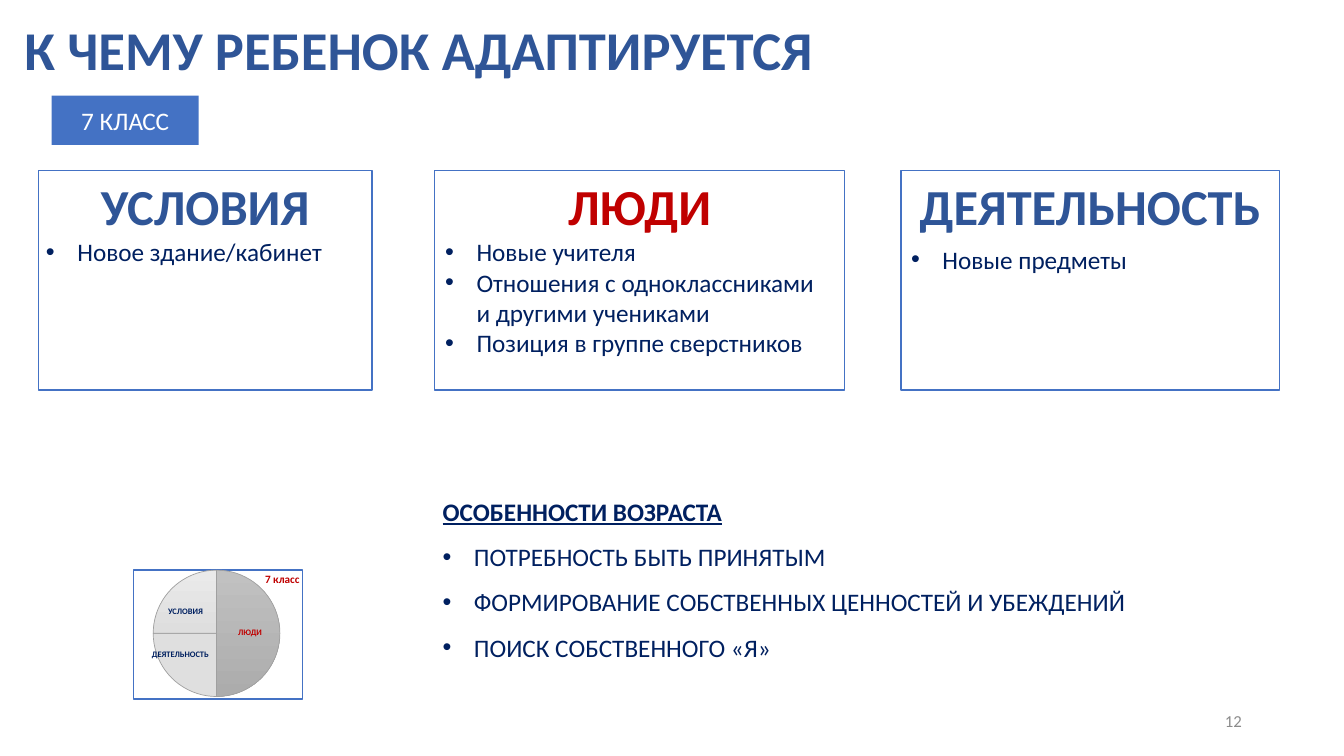
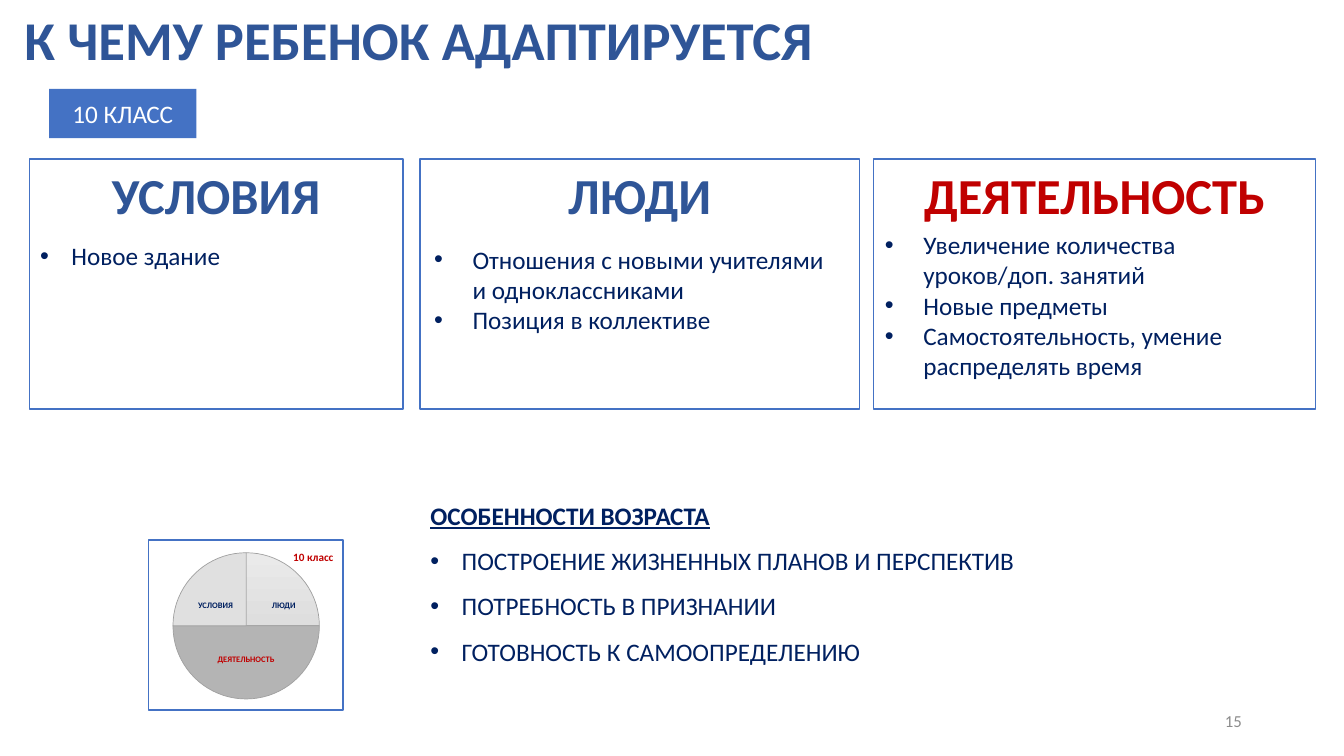
"""Two slides on what a child adapts to in grades 7 and 10."""
from pptx import Presentation
from pptx import util as u
from pptx.chart.data import CategoryChartData
from pptx.dml.color import RGBColor
from pptx.enum import chart as ch, shapes, text
from pptx.oxml import parse_xml
from pptx.oxml.ns import nsdecls, qn

COLORS = {
    "blue": "2F5597", "red": "C00000", "navy": "002060", "accent": "4472C4",
    "white": "FFFFFF", "black": "000000", "number": "8C8C8C", "edge": "A0A0A0",
}
FONT = "Calibri"
LEFT, CENTER, RIGHT = text.PP_ALIGN.LEFT, text.PP_ALIGN.CENTER, text.PP_ALIGN.RIGHT
LIGHT = ("EAEAEA", "DEDEDE")

SLIDES = [
    {
        "number": "12", "title_top": 0.46,
        "tag": ("7 КЛАСС", 1.3, 2.41),
        "card_top": 4.29, "card_height": 5.54,
        "cards": [
            ("УСЛОВИЯ", "blue", 0.97, 8.41, (0.91, 5.84, 10.9), 0.79,
             ["Новое здание/кабинет"]),
            ("ЛЮДИ", "red", 10.95, 10.34, (10.97, 5.84, 9.8), 0.79,
             ["Новые учителя", "Отношения с одноклассниками и другими учениками",
              "Позиция в группе сверстников"]),
            ("ДЕЯТЕЛЬНОСТЬ", "blue", 22.71, 9.53, (22.71, 6.02, 8.76), 0.79,
             ["Новые предметы"]),
        ],
        "traits": (10.9, 11.99, ["ПОТРЕБНОСТЬ БЫТЬ ПРИНЯТЫМ",
                                 "ФОРМИРОВАНИЕ СОБСТВЕННЫХ ЦЕННОСТЕЙ И УБЕЖДЕНИЙ",
                                 "ПОИСК СОБСТВЕННОГО «Я»"]),
        "pie": (3.35, 14.35, 4.29, 3.28), "plot": (0.114, 0, 0.755, 0.982),
        "values": (50, 25, 25), "fills": [("C1C1C1", "ACACAC"), ("DFDFDF",), LIGHT],
        "labels": [
            ("7 класс", 8, "red", LEFT, 6.43, 14.3, 1.8),
            ("УСЛОВИЯ", 6, "navy", CENTER, 3.81, 15.16, 1.73),
            ("ЛЮДИ", 6, "red", CENTER, 5.64, 15.67, 1.32),
            ("ДЕЯТЕЛЬНОСТЬ", 6, "navy", CENTER, 3.35, 16.23, 2.39),
        ],
    },
    {
        "number": "15", "title_top": 0.2,
        "tag": ("10 КЛАСС", 1.24, 2.24),
        "card_top": 4.01, "card_height": 6.3,
        "cards": [
            ("УСЛОВИЯ", "blue", 0.74, 9.42, (0.76, 5.94, 10.9), 0.79,
             ["Новое здание"]),
            ("ЛЮДИ", "blue", 10.59, 11.07, (10.69, 6.02, 10.52), 0.97,
             ["Отношения с новыми учителями и одноклассниками",
              "Позиция в коллективе"]),
            ("ДЕЯТЕЛЬНОСТЬ", "red", 22.02, 11.13, (22.05, 5.66, 11.1), 0.97,
             ["Увеличение количества уроков/доп. занятий", "Новые предметы",
              "Самостоятельность, умение распределять время"]),
        ],
        "traits": (10.59, 12.09, ["ПОСТРОЕНИЕ ЖИЗНЕННЫХ ПЛАНОВ И ПЕРСПЕКТИВ",
                                  "ПОТРЕБНОСТЬ В ПРИЗНАНИИ",
                                  "ГОТОВНОСТЬ К САМООПРЕДЕЛЕНИЮ"]),
        "pie": (3.73, 13.59, 4.93, 4.32), "plot": (0.125, 0.064, 0.754, 0.99),
        "values": (25, 50, 25), "fills": [LIGHT, ("B4B4B4",), ("E0E0E0",)],
        "labels": [
            ("10 класс", 8, "red", LEFT, 7.14, 13.74, 1.8),
            ("УСЛОВИЯ", 6, "navy", CENTER, 4.67, 14.99, 1.52),
            ("ЛЮДИ", 6, "navy", CENTER, 6.53, 14.99, 1.24),
            ("ДЕЯТЕЛЬНОСТЬ", 6, "red", CENTER, 4.93, 16.36, 2.54),
        ],
    },
]


def add_line(tf, value, size, color, align=LEFT, bold=False, underline=False,
             indent=0, spacing=1.0):
    """Write one paragraph, bulleted when it has an indent."""
    p = tf.paragraphs[0] if not tf.paragraphs[0].runs else tf.add_paragraph()
    pPr = p._p.get_or_add_pPr()
    pPr.set("marL", str(u.Cm(indent)))
    pPr.set("indent", str(-u.Cm(indent)))
    if indent:
        pPr.append(parse_xml(f'<a:buFont {nsdecls("a")} typeface="Arial"/>'))
        pPr.append(parse_xml(f'<a:buChar {nsdecls("a")} char="•"/>'))
    else:
        pPr.append(parse_xml(f'<a:buNone {nsdecls("a")}/>'))
    p.alignment, p.line_spacing, p.space_before = align, spacing, u.Pt(0)
    r = p.add_run()
    r.text = value
    r.font.name, r.font.size = FONT, u.Pt(size)
    r.font.bold, r.font.underline = bold, underline
    r.font.color.rgb = RGBColor.from_string(COLORS[color])


def add_box(s, x, y, w, h, fill=None, line=None, anchor=text.MSO_ANCHOR.TOP):
    """Add a text box, or a rectangle when a fill is given."""
    place = [u.Cm(v) for v in (x, y, w, h)]
    if fill:
        sp = s.shapes.add_shape(shapes.MSO_SHAPE.RECTANGLE, *place)
        sp.shadow.inherit = False
        sp.fill.solid()
        sp.fill.fore_color.rgb = RGBColor.from_string(COLORS[fill])
        if line:
            sp.line.color.rgb = RGBColor.from_string(COLORS[line])
            sp.line.width = u.Pt(1)
        else:
            sp.line.fill.background()
    else:
        sp = s.shapes.add_textbox(*place)
    sp.text_frame.word_wrap = True
    sp.text_frame.vertical_anchor = anchor
    return sp.text_frame


prs = Presentation()
prs.slide_width, prs.slide_height = u.Cm(33.87), u.Cm(19.05)

for item in SLIDES:
    s = prs.slides.add_slide(prs.slide_layouts[1])
    title, body = s.shapes.title, s.placeholders[1]
    traits_left, traits_top, traits = item["traits"]
    for sp, place in ((title, (0.36, item["title_top"], 30.25, 1.78)),
                      (body, (traits_left, traits_top, 22, 4.75))):
        sp.left, sp.top, sp.width, sp.height = [u.Cm(v) for v in place]
        sp.text_frame.word_wrap = True
        sp.text_frame.auto_size = text.MSO_AUTO_SIZE.NONE
        sp.text_frame.vertical_anchor = text.MSO_ANCHOR.TOP
    add_line(title.text_frame, "К ЧЕМУ РЕБЕНОК АДАПТИРУЕТСЯ", 39, "blue",
             bold=True, spacing=0.9)
    add_line(body.text_frame, "ОСОБЕННОСТИ ВОЗРАСТА", 18, "navy",
             bold=True, underline=True, spacing=1.5)
    for trait in traits:
        add_line(body.text_frame, trait, 18, "navy", indent=0.79, spacing=1.5)

    grade, x, y = item["tag"]
    tf = add_box(s, x, y, 3.71, 1.24, "accent", anchor=text.MSO_ANCHOR.MIDDLE)
    add_line(tf, grade, 18, "white", CENTER)

    for heading, color, x, w, (list_x, list_y, list_w), indent, points in item["cards"]:
        tf = add_box(s, x, item["card_top"], w, item["card_height"], "white", "accent")
        add_line(tf, heading, 36, color, CENTER, bold=True)
        tf = add_box(s, list_x, list_y, list_w, 1.02)
        for point in points:
            add_line(tf, point, 18, "navy", indent=indent)

    data = CategoryChartData()
    data.categories = ["1", "2", "3"]
    data.add_series("Series 1", item["values"])
    chart = s.shapes.add_chart(ch.XL_CHART_TYPE.PIE,
                               *[u.Cm(v) for v in item["pie"]], data).chart
    chart.has_legend = chart.has_title = False
    chart.font.name, chart.font.size = FONT, u.Pt(10)
    chart.font.color.rgb = RGBColor.from_string(COLORS["black"])
    plot = chart.plots[0]
    plot.vary_by_categories = True
    for i, colors in enumerate(item["fills"]):
        fmt = plot.series[0].points[i].format
        if len(colors) > 1:
            fmt.fill.gradient()
            fmt.fill.gradient_angle = 270
            for stop, value in zip(fmt.fill.gradient_stops, colors):
                stop.color.rgb = RGBColor.from_string(value)
        else:
            fmt.fill.solid()
            fmt.fill.fore_color.rgb = RGBColor.from_string(colors[0])
        fmt.line.color.rgb = RGBColor.from_string(COLORS["edge"])
        fmt.line.width = u.Pt(0.5)

    root = chart.element.find(qn("c:chart"))
    area = root.find(qn("c:plotArea"))
    for old in area.findall(qn("c:layout")):
        area.remove(old)
    sides = "".join(f'<c:{k} val="{v}"/>' for k, v in zip("xywh", item["plot"]))
    area.insert(0, parse_xml(
        f'<c:layout {nsdecls("c")}><c:manualLayout><c:layoutTarget val="inner"/>'
        f'<c:xMode val="edge"/><c:yMode val="edge"/>{sides}'
        '</c:manualLayout></c:layout>'))
    root.addnext(parse_xml(
        f'<c:spPr {nsdecls("c", "a")}>'
        f'<a:solidFill><a:srgbClr val="{COLORS["white"]}"/></a:solidFill>'
        f'<a:ln w="{u.Pt(1)}"><a:solidFill><a:srgbClr val="{COLORS["accent"]}"/>'
        '</a:solidFill></a:ln></c:spPr>'))

    for label, size, color, align, x, y, w in item["labels"]:
        add_line(add_box(s, x, y, w, 0.5), label, size, color, align, bold=True)

    tf = add_box(s, 23.93, 17.65, 7.62, 1.02, anchor=text.MSO_ANCHOR.MIDDLE)
    add_line(tf, item["number"], 12, "number", RIGHT)

prs.save("out.pptx")
